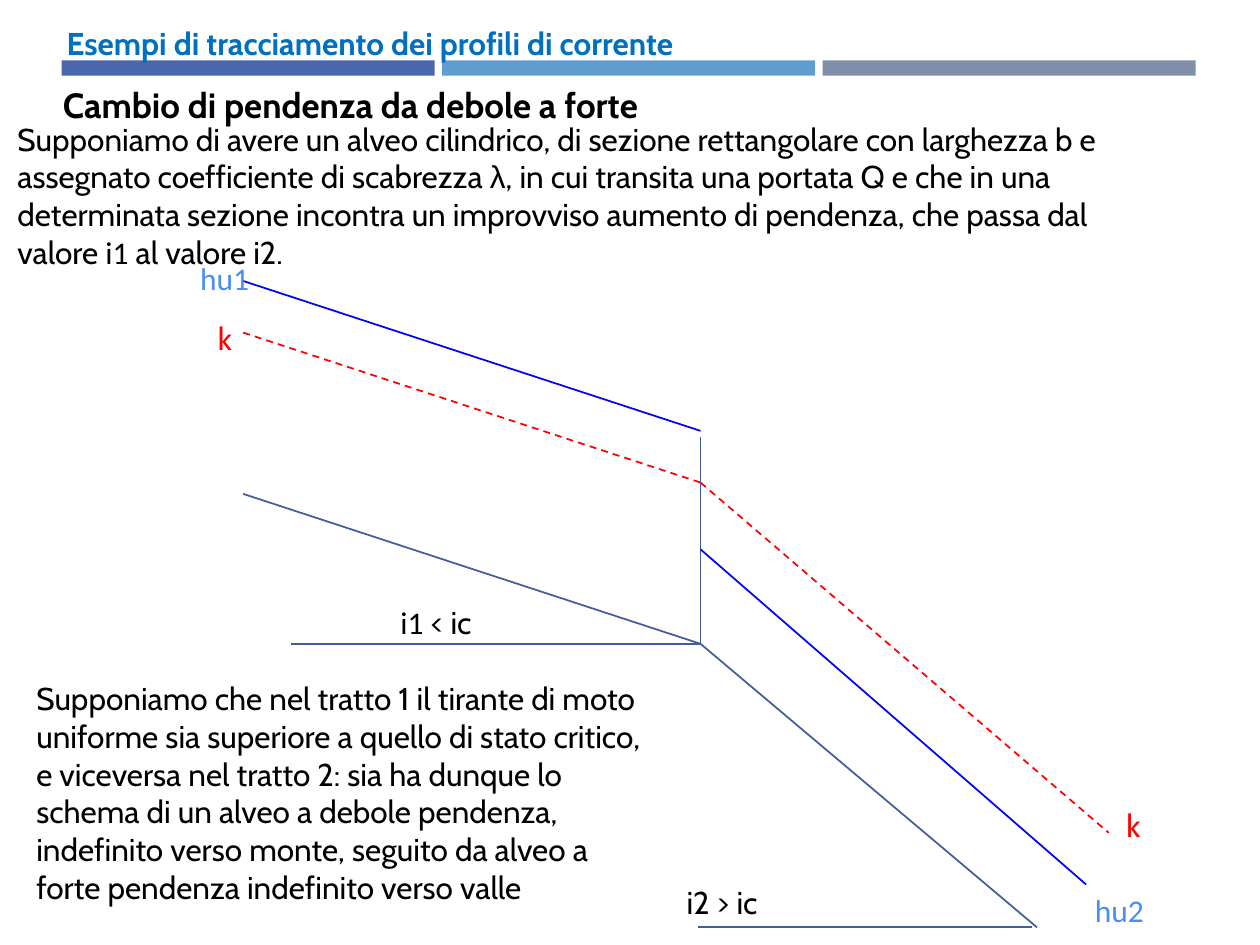
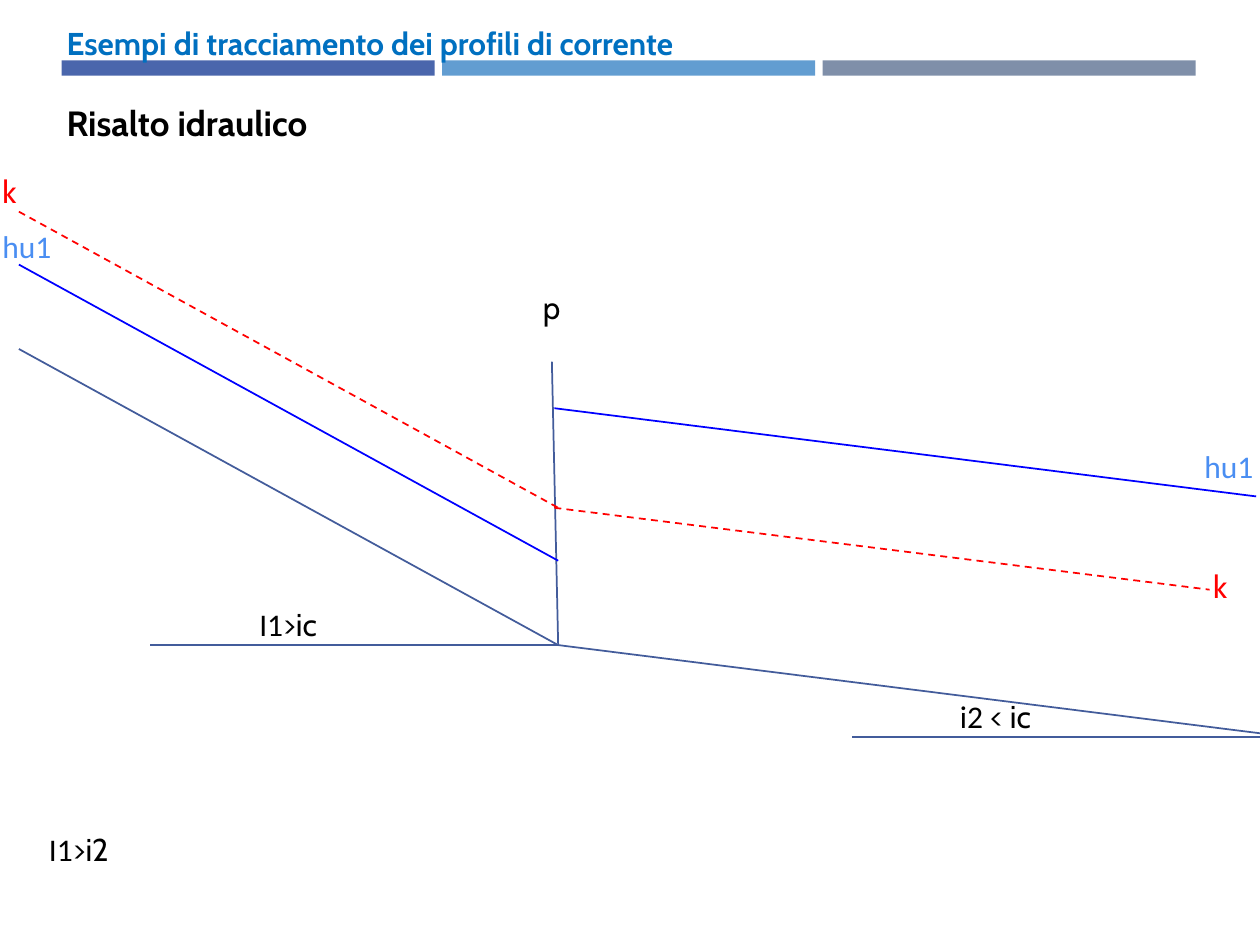
from lxml import etree
from pptx import Presentation
from pptx import util as u
from pptx.dml.color import RGBColor
from pptx.enum import dml, shapes, text
from pptx.oxml.ns import qn

WIDTH, HEIGHT = 10, 7.5
COLORS = {
    "title": "0070C0", "text": "000000", "bed": "435C9B", "critical": "FF0000",
    "uniform": "0000FF", "depth": "4A8EF2",
}
BANDS = ["4A66AC", "629DD1", "7F8FA9"]
BAND_LEFT, BAND_TOP, BAND_WIDTH, BAND_HEIGHT, BAND_GAP = 0.49, 0.48, 2.96, 0.12, 0.06
TITLE = "Esempi di tracciamento dei profili di corrente"
LABEL_HEIGHT = 0.4

# Label style: font, colour, box width, wrap (a None width is given by the label itself)
LABEL_STYLES = {
    "critical": ("Cabin", "critical", 0.48, True),
    "depth": ("Calibri", "depth", 0.78, True),
    "slope": ("Cabin", "text", None, False),
    "note": ("Cabin", "text", None, True),
}

# Lines: (x1, y1, x2, y2). Labels: style, left, top, runs, width.
# A run is a string, or a (string, font) pair where the font changes.
SLIDES = [
    {
        "heading": ("Cambio di pendenza da debole a forte", 0.4, 0.61),
        "lines": {
            "bed": [(1.93, 3.92, 5.56, 5.11), (5.56, 5.11, 8.23, 7.36),
                    (5.56, 5.11, 5.56, 3.47), (8.19, 7.36, 5.54, 7.36),
                    (5.56, 5.11, 2.31, 5.11)],
            "critical": [(1.93, 2.64, 5.56, 3.83), (5.56, 3.83, 8.8, 6.61)],
            "uniform": [(5.56, 4.36, 8.62, 7.02), (1.93, 2.23, 5.56, 3.42)],
        },
        "labels": [
            ("note", 0.04, 0.9, [
                "Supponiamo di avere un alveo cilindrico, di sezione rettangolare con "
                "larghezza b e assegnato coefficiente di scabrezza ", ("λ", "Arial"),
                ", in cui transita una portata Q e che in una determinata sezione incontra "
                "un improvviso aumento di pendenza, che passa dal valore ",
                ("i1", "Calibri"), " al valore i2."], 9.26),
            ("note", 0.19, 5.34, [
                "Supponiamo che nel tratto 1 il tirante di moto uniforme sia superiore a "
                "quello di stato critico, e viceversa nel tratto 2: sia ha dunque lo schema "
                "di un alveo a debole pendenza, indefinito verso monte, seguito da alveo a "
                "forte pendenza indefinito verso valle"], 5),
            ("slope", 5.35, 6.96, ["i2 > ic"], 0.79),
            ("slope", 3.08, 4.74, [("i1", "Calibri"), " < ic"], 0.84),
            ("depth", 8.59, 7.02, ["hu2"], None),
            ("critical", 8.84, 6.35, ["k"], None),
            ("critical", 1.63, 2.48, ["k"], None),
            ("depth", 1.49, 2.01, ["hu1"], None),
        ],
    },
    {
        "heading": ("Risalto idraulico", 0.43, 0.76),
        "lines": {
            "bed": [(0.15, 2.77, 4.43, 5.12), (4.43, 5.12, WIDTH, 5.82),
                    (4.38, 2.87, 4.43, 5.12), (WIDTH, 5.85, 6.76, 5.85),
                    (4.43, 5.12, 1.19, 5.12)],
            "critical": [(0.15, 1.68, 4.43, 4.03), (4.4, 4.03, 9.6, 4.68)],
            "uniform": [(0.15, 2.1, 4.43, 4.45), (4.4, 3.24, 9.97, 3.94)],
        },
        "labels": [
            ("critical", -0.08, 1.32, ["k"], None),
            ("depth", -0.08, 1.75, ["hu1"], None),
            ("slope", 7.52, 5.48, [("i2", "Calibri"), " < ic"], 0.84),
            ("slope", 1.96, 4.75, [("I1", "Calibri"), ">ic"], 0.7),
            ("critical", 9.53, 4.45, ["k"], None),
            ("depth", 9.46, 3.5, ["hu1"], None),
            ("note", 0.29, 6.54, [("I1", "Calibri"), ">i2"], 1.01),
            ("note", 4.21, 2.24, ["p"], 0.58),
        ],
    },
]


def rgb(name):
    return RGBColor.from_string(COLORS.get(name, name))


def add_text(slide, left, top, width, runs, font="Cabin", color="text",
             size=18, bold=False, wrap=True):
    box = slide.shapes.add_textbox(*map(u.Inches, (left, top, width, LABEL_HEIGHT)))
    frame = box.text_frame
    frame.word_wrap = wrap
    frame.auto_size = text.MSO_AUTO_SIZE.SHAPE_TO_FIT_TEXT
    paragraph = frame.paragraphs[0]
    for item in runs:
        words, run_font = (item, font) if isinstance(item, str) else item
        run = paragraph.add_run()
        run.text = words
        run.font.name = run_font
        run.font.size = u.Pt(size)
        run.font.bold = bold
        run.font.color.rgb = rgb(color)


def add_line(slide, ends, kind):
    line = slide.shapes.add_connector(shapes.MSO_CONNECTOR.STRAIGHT, *map(u.Inches, ends))
    line.line.color.rgb = rgb(kind)
    line.line.width = u.Pt(1)
    if kind == "critical":
        line.line.dash_style = dml.MSO_LINE.DASH
    etree.SubElement(line._element.spPr, qn("a:effectLst"))


def add_header(slide, heading, left, top):
    """Draw the three bands, the shared title and the slide's own heading."""
    for column, color in enumerate(BANDS):
        band_left = BAND_LEFT + column * (BAND_WIDTH + BAND_GAP)
        band = slide.shapes.add_shape(
            shapes.MSO_SHAPE.RECTANGLE,
            *map(u.Inches, (band_left, BAND_TOP, BAND_WIDTH, BAND_HEIGHT)))
        band.shadow.inherit = False
        band.fill.solid()
        band.fill.fore_color.rgb = rgb(color)
        band.line.fill.background()
    add_text(slide, 0.43, 0.14, 6.06, [TITLE], color="title", bold=True)
    add_text(slide, left, top, 5.67, [heading], size=20, bold=True)


def main():
    presentation = Presentation()
    presentation.slide_width = u.Inches(WIDTH)
    presentation.slide_height = u.Inches(HEIGHT)
    for content in SLIDES:
        slide = presentation.slides.add_slide(presentation.slide_layouts[6])
        add_header(slide, *content["heading"])
        for kind, lines in content["lines"].items():
            for ends in lines:
                add_line(slide, ends, kind)
        for style, left, top, runs, width in content["labels"]:
            font, color, style_width, wrap = LABEL_STYLES[style]
            add_text(slide, left, top, width or style_width, runs, font, color, wrap=wrap)
    presentation.save("out.pptx")


if __name__ == "__main__":
    main()
